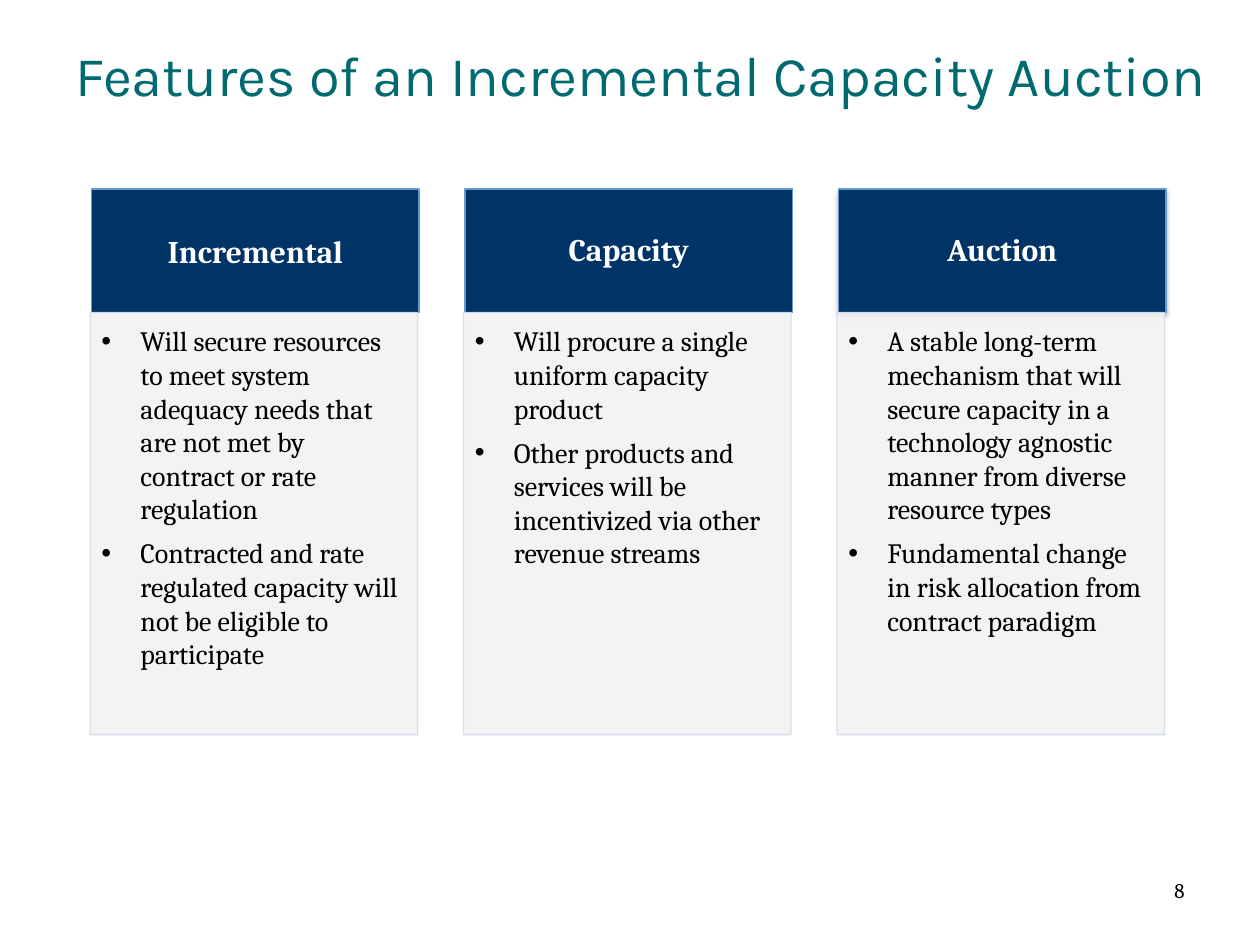
from lxml.etree import SubElement
from pptx import Presentation
from pptx.dml.color import RGBColor
from pptx.enum.shapes import MSO_SHAPE
from pptx.enum.text import MSO_ANCHOR, PP_ALIGN
from pptx.oxml.ns import qn
from pptx.util import Pt

TITLE = "Features of an Incremental Capacity Auction"
PAGE_NUMBER = "8"
COLUMNS = [
    {"heading": "Incremental", "line_spacing": 1.0, "shadow": False, "points": [
        "Will secure resources to meet system adequacy needs that are not met by contract or rate regulation",
        "Contracted and rate regulated capacity will not be eligible to participate",
    ]},
    {"heading": "Capacity", "line_spacing": 0.9, "shadow": False, "points": [
        "Will procure a single uniform capacity product",
        "Other products and services will be incentivized via other revenue streams",
    ]},
    {"heading": "Auction", "line_spacing": 0.9, "shadow": True, "points": [
        "A stable long-term mechanism that will secure capacity in a technology agnostic manner from diverse resource types",
        "Fundamental change in risk allocation from contract paradigm",
    ]},
]

COLUMN_LEFT, COLUMN_STEP, COLUMN_WIDTH = 51.5, 213.4, 187.2
HEADING_TOP, HEADING_HEIGHT, BODY_HEIGHT = 108, 70.6, 241.2
HEADING_OFFSET = 0.8
BULLET_INDENT = 22.3

TITLE_FONT = {"name": "Karla", "size": Pt(32)}
NUMBER_FONT = {"name": "Cambria", "size": Pt(12)}
HEADING_FONT = {"name": "Cambria", "size": Pt(18), "bold": True}
BODY_FONT = {"name": "Cambria", "size": Pt(16)}


def color(value):
    return RGBColor.from_string(value)


def set_attributes(target, values):
    for name, value in values.items():
        setattr(target, name, value)


def set_frame(shape, anchor, margins):
    frame = shape.text_frame
    frame.word_wrap = True
    frame.vertical_anchor = anchor
    sides = ("margin_left", "margin_top", "margin_right", "margin_bottom")
    set_attributes(frame, {side: Pt(margin) for side, margin in zip(sides, margins)})
    return frame


def write(paragraph, text, font, font_color, **layout):
    set_attributes(paragraph, layout)
    run = paragraph.add_run()
    run.text = text
    set_attributes(run.font, font)
    run.font.color.rgb = color(font_color)


def add_text(slide, box, margins, text, font, font_color, alignment):
    shape = slide.shapes.add_textbox(*map(Pt, box))
    frame = set_frame(shape, MSO_ANCHOR.TOP, margins)
    write(frame.paragraphs[0], text, font, font_color, alignment=alignment)


def add_panel(slide, box, fill_color, line_color):
    shape = slide.shapes.add_shape(MSO_SHAPE.RECTANGLE, *map(Pt, box))
    shape.shadow.inherit = False
    shape.fill.solid()
    shape.fill.fore_color.rgb = color(fill_color)
    shape.line.color.rgb = color(line_color)
    shape.line.width = Pt(0.75)
    return shape


def add_shadow(shape):
    effects = shape._element.spPr.find(qn("a:effectLst"))
    shadow = SubElement(effects, qn("a:outerShdw"), blurRad=str(Pt(3.1)), dist=str(Pt(1.8)),
                        dir="5400000", rotWithShape="0")
    shade = SubElement(shadow, qn("a:srgbClr"), val="000000")
    SubElement(shade, qn("a:alpha"), val="35000")


def make_translucent(shape):
    for shade in shape._element.spPr.iter(qn("a:srgbClr")):
        SubElement(shade, qn("a:alpha"), val="90000")


def add_bullet(paragraph):
    properties = paragraph._p.get_or_add_pPr()
    properties.set("marL", str(Pt(BULLET_INDENT)))
    properties.set("indent", str(-Pt(BULLET_INDENT)))
    SubElement(properties, qn("a:buFont"), typeface="Arial")
    SubElement(properties, qn("a:buChar"), char="•")


def add_column(slide, left, column):
    heading_box = (left + HEADING_OFFSET, HEADING_TOP, COLUMN_WIDTH, HEADING_HEIGHT)
    heading = add_panel(slide, heading_box, "003366", "6699CC")
    if column["shadow"]:
        add_shadow(heading)
    frame = set_frame(heading, MSO_ANCHOR.MIDDLE, (10, 6, 10, 6))
    write(frame.paragraphs[0], column["heading"], HEADING_FONT, "FFFFFF",
          alignment=PP_ALIGN.CENTER, line_spacing=column["line_spacing"])

    body_box = (left, HEADING_TOP + HEADING_HEIGHT, COLUMN_WIDTH, BODY_HEIGHT)
    body = add_panel(slide, body_box, "F2F2F2", "D3DEEC")
    make_translucent(body)
    frame = set_frame(body, MSO_ANCHOR.TOP, (6.5, 6.5, 8.6, 10))
    for index, point in enumerate(column["points"]):
        paragraph = frame.add_paragraph() if index else frame.paragraphs[0]
        add_bullet(paragraph)
        write(paragraph, point, BODY_FONT, "000000",
              alignment=PP_ALIGN.LEFT, space_after=Pt(6))


def main():
    presentation = Presentation()
    presentation.slide_width, presentation.slide_height = Pt(720), Pt(540)
    slide = presentation.slides.add_slide(presentation.slide_layouts[6])
    add_text(slide, (36, 23, 666, 54), (7.2, 0, 7.2, 3.6), TITLE, TITLE_FONT, "006A71", PP_ALIGN.LEFT)
    for index, column in enumerate(COLUMNS):
        add_column(slide, COLUMN_LEFT + index * COLUMN_STEP, column)
    add_text(slide, (642, 498, 42, 36), (7.2, 3.6, 7.2, 3.6), PAGE_NUMBER, NUMBER_FONT, "000000", PP_ALIGN.RIGHT)
    presentation.save("out.pptx")


if __name__ == "__main__":
    main()
